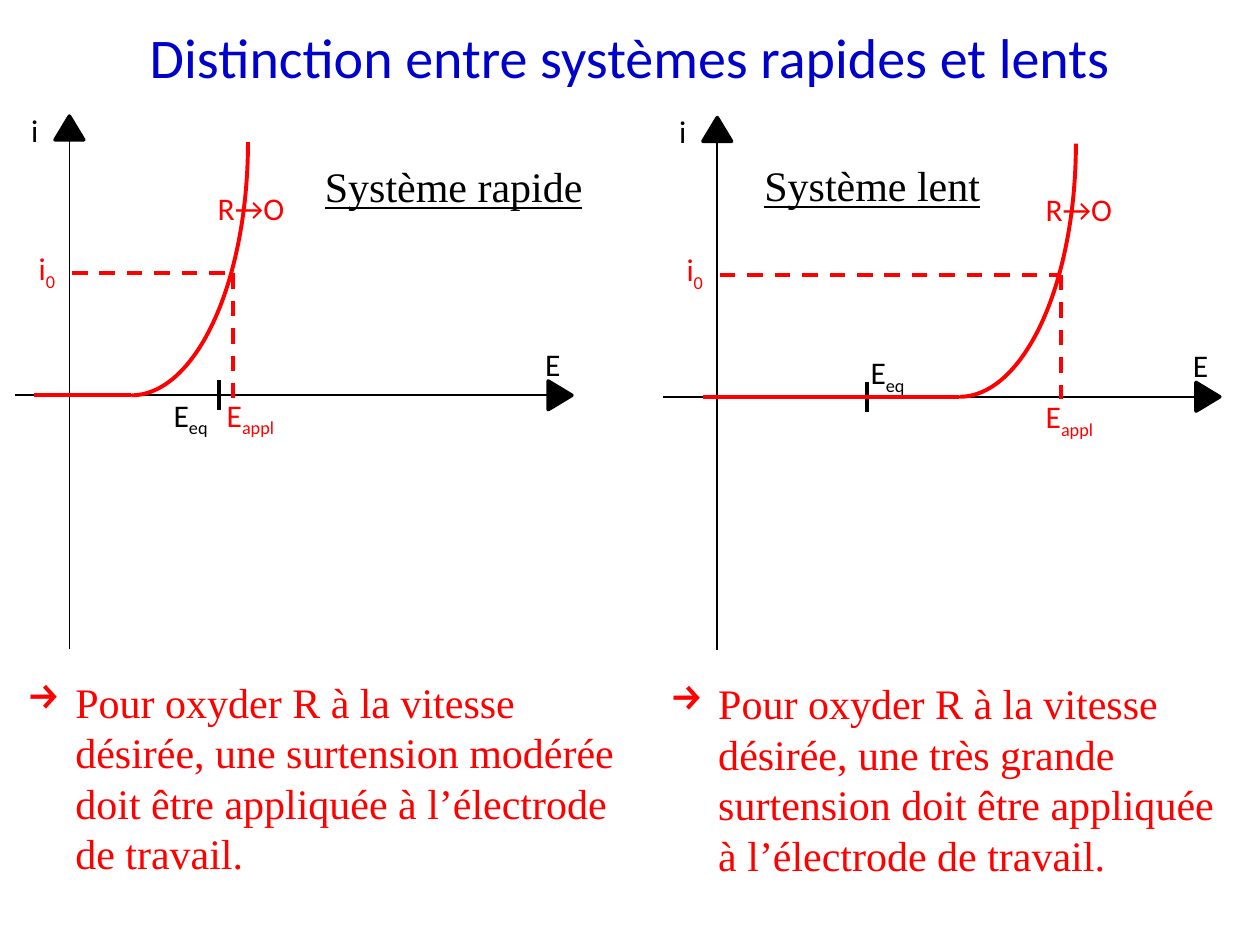
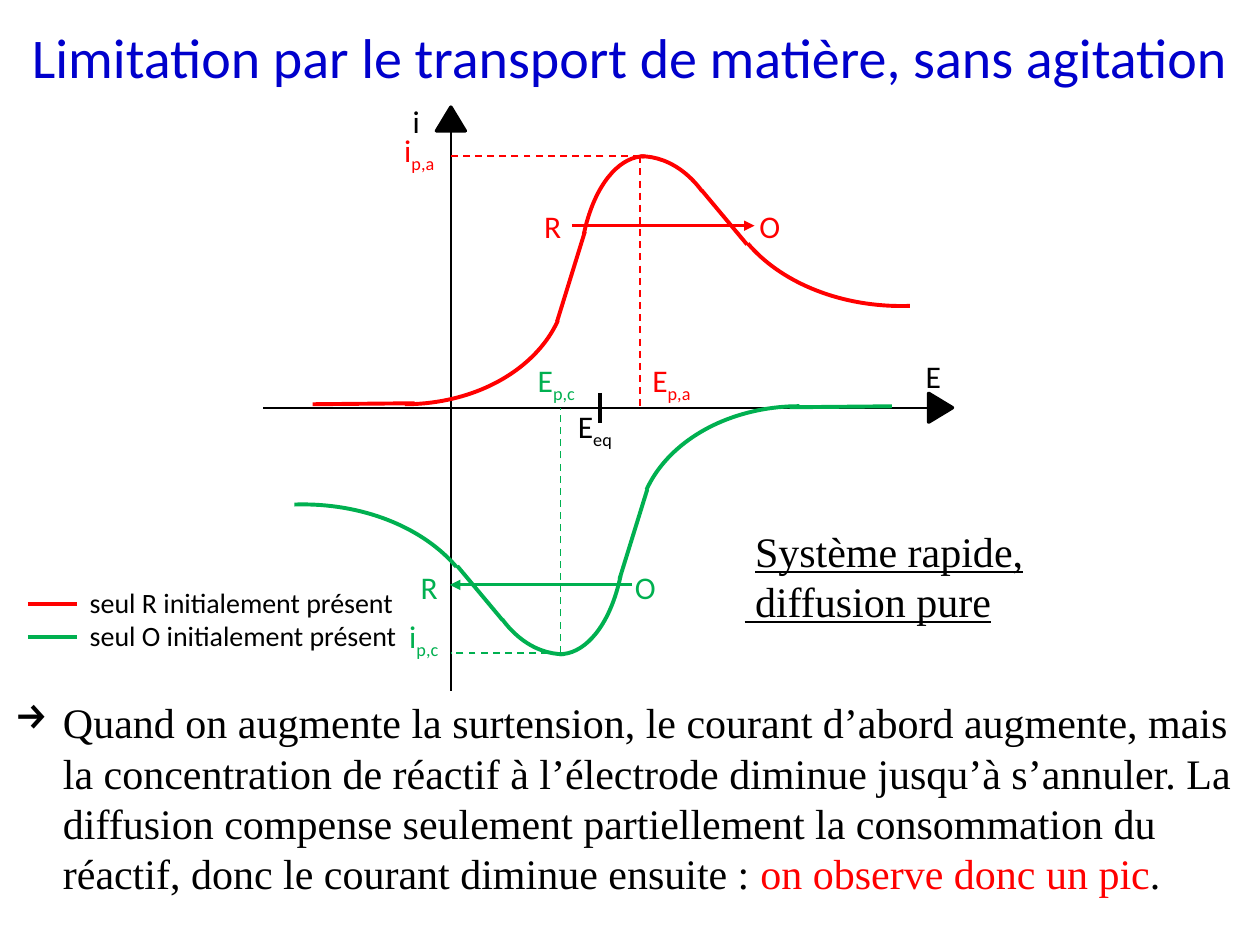
from lxml import etree
from pptx import Presentation
from pptx.dml.color import RGBColor
from pptx.enum import dml, shapes, text
from pptx.oxml import ns
from pptx.util import Cm, Pt

BLACK, RED, GREEN, BLUE = "000000", "FF0000", "00B050", "0000CC"
SANS, SERIF = "Calibri", "Times New Roman"
CURVE_PT = 2.25
INDENT = 0.97


def color(hex_code):
    return RGBColor.from_string(hex_code)


def sub(parent, tag, **attrs):
    return etree.SubElement(parent, ns.qn(tag), **attrs)


def add_run(p, words, size, hue, font, underline=False, subscript=False):
    r = p.add_run()
    r.text = words
    r.font.size, r.font.name = Pt(size), font
    r.font.color.rgb = color(hue)
    if underline:
        r.font.underline = True
    if subscript:
        r.font._element.set("baseline", "-25000")


def add_box(s, x, y, w, h):
    tf = s.shapes.add_textbox(Cm(x), Cm(y), Cm(w), Cm(h)).text_frame
    tf.word_wrap = True
    return tf


def label(s, x, y, words, hue=BLACK, index="", w=2.3, size=18):
    p = add_box(s, x, y, w, 1.02).paragraphs[0]
    add_run(p, words, size, hue, SANS)
    if index:
        add_run(p, index, size, hue, SANS, subscript=True)


def line(s, x1, y1, x2, y2, hue=BLACK, pt=1, dash=False, arrow=False):
    c = s.shapes.add_connector(shapes.MSO_CONNECTOR.STRAIGHT, Cm(x1), Cm(y1), Cm(x2), Cm(y2))
    c.line.color.rgb = color(hue)
    c.line.width = Pt(pt)
    if dash:
        c.line.dash_style = dml.MSO_LINE.DASH
    if arrow:
        sub(c.line._get_or_add_ln(), "a:tailEnd", type="triangle")
    sub(c._element.spPr, "a:effectLst")


def arc(s, x, y, w, h, start, end, hue):
    """Clockwise arc of an ellipse, in degrees from three o'clock."""
    sp = s.shapes.add_shape(shapes.MSO_SHAPE.ARC, Cm(x), Cm(y), Cm(w), Cm(h))
    for i, angle in enumerate((start, end)):
        sp.adjustments[i] = angle % 360 * 0.6
    sp.shadow.inherit = False
    sp.fill.background()
    sp.line.color.rgb = color(hue)
    sp.line.width = Pt(CURVE_PT)


def arrowhead(s, x, y, rotation=0):
    sp = s.shapes.add_shape(shapes.MSO_SHAPE.ISOSCELES_TRIANGLE, Cm(x), Cm(y), Cm(0.58), Cm(0.48))
    sp.rotation = rotation
    sp.fill.solid()
    sp.fill.fore_color.rgb = color(BLACK)
    sp.line.color.rgb = color(BLACK)
    sp.line.width = Pt(2)
    sub(sp.line._get_or_add_ln(), "a:round")
    sp.shadow.inherit = False


def title(s, words):
    p = add_box(s, 0, 0.33, 25.4, 1.63).paragraphs[0]
    p.alignment = text.PP_ALIGN.CENTER
    add_run(p, words, 32, BLUE, SANS)


def note(s, x, y, w, *parts):
    """Paragraph with an arrow bullet; parts are (words, colour)."""
    p = add_box(s, x, y, w, 4.37).paragraphs[0]
    pPr = p._p.get_or_add_pPr()
    pPr.set("marL", str(Cm(INDENT)))
    pPr.set("indent", str(-Cm(INDENT)))
    sub(pPr, "a:buChar", char="→")
    for words, hue in parts:
        add_run(p, words, 24, hue, SERIF)


def axes(s, x, y, w, h, x0, y0, tick, eq_at):
    """Current-potential axes crossing at (x0, y0) within the box."""
    x0, y0, right = x + x0, y + y0, x + w
    line(s, x, y0, right, y0)
    line(s, x0, y, x0, y + h)
    arrowhead(s, x0 - 0.29, y - 0.43)
    arrowhead(s, right - 0.1, y0 - 0.24, 90)
    line(s, x + tick, y0 - 0.3, x + tick, y0 + 0.3, pt=2)
    label(s, x + eq_at[0], y + eq_at[1], "E", index="eq", w=2)
    label(s, right - 0.36, y0 - 1.14, "E", w=1.5)
    label(s, x0 - 1.02, y - 0.66, "i", w=1)


def oxidation_plot(s, x, y, name, name_at, eq_at, shift, foot, appl):
    """Axes with an oxidation branch moved right by shift."""
    x0, y0, level = 1.1, 5.2, 2.74
    axes(s, x, y, 10.8, 10.31, x0, y0, 4.12, eq_at)
    # Current curve
    left = x + shift
    arc(s, left, y - 5.01, 4.7, 10.21, 0, 90, RED)
    line(s, left + 2.35, y + y0, x + foot, y + y0, RED, CURVE_PT)
    label(s, left + 3.84, y + 0.91, "R→O", RED, w=3)
    # Applied potential and its current
    line(s, left + 4.4, y + level, left + 4.4, y + y0 + 0.05, RED, CURVE_PT, dash=True)
    label(s, x + appl, y + 5.08, "E", RED, "appl")
    line(s, x + x0 + 0.05, y + level, left + 4.4, y + level, RED, CURVE_PT, dash=True)
    label(s, x + 0.23, y + 2.12, "i", RED, "0", w=1)
    # Name of the system
    p = add_box(s, x + name_at[0], y + name_at[1], 5.87, 1.27).paragraphs[0]
    add_run(p, name, 24, BLACK, SERIF, underline=True)


# Oxidation wave, relative to its axes: x, y, w, h, start, end
WAVE_ARCS = [
    (-0.41, 0.53, 6.53, 5.03, 15.08, 90),
    (6.37, 0.56, 2.64, 4.95, 216.13, 270),
    (5.82, 0.56, 3.56, 4.95, 270, 305.07),
    (9.22, -1.75, 7.29, 5.33, 86.35, 155.6),
]
WAVE_LINES = [
    (0.99, 5.56, 3.05, 5.54),
    (5.92, 3.89, 6.48, 2.08),
    (8.84, 1.25, 9.75, 2.34),
]
REACTION = (6.22, 1.96, 9.9, 1.96)
TURN_X, TURN_Y = 13.66, 11.16


def wave(s, x, y, hue, turned=False):
    """Peaked wave; the reduction wave is the same one turned by 180°."""
    def place(px, py, w=0, h=0):
        if turned:
            px, py = TURN_X - px - w, TURN_Y - py - h
        return x + px, y + py

    for ax, ay, w, h, start, end in WAVE_ARCS:
        turn = 180 if turned else 0
        arc(s, *place(ax, ay, w, h), w, h, start + turn, end + turn, hue)
    for x1, y1, x2, y2 in WAVE_LINES:
        line(s, *place(x1, y1), *place(x2, y2), hue, CURVE_PT)
    line(s, *place(*REACTION[:2]), *place(*REACTION[2:]), hue, 1.75, arrow=True)


def peak_marks(s, x, y, x0, y0, peak, hue, index, e_at, i_at, r_at, o_at):
    px, py = x + peak[0], y + peak[1]
    line(s, px, py, x + x0, py, hue, dash=True)
    line(s, px, py, px, y + y0, hue, dash=True)
    for words, sub_text, (lx, ly) in (("E", index, e_at), ("i", index, i_at),
                                      ("R", "", r_at), ("O", "", o_at)):
        label(s, x + lx, y + ly, words, hue, sub_text)


def peak_plot(s, x, y):
    x0, y0 = 3.78, 5.63
    axes(s, x, y, 13.46, 11.33, x0, y0, 6.78, (6.09, 5.49))
    wave(s, x, y, RED)
    peak_marks(s, x, y, x0, y0, (7.59, 0.56), RED, "p,a",
               (7.59, 4.57), (2.59, -0.08), (5.41, 1.45), (9.75, 1.45))
    wave(s, x, y, GREEN, turned=True)
    peak_marks(s, x, y, x0, y0, (5.99, 10.57), GREEN, "p,c",
               (5.28, 4.57), (2.69, 9.73), (2.92, 8.74), (7.24, 8.74))


def legend(s, x, y):
    entries = [("seul R initialement présent", RED), ("seul O initialement présent", GREEN)]
    for i, (words, hue) in enumerate(entries):
        row = y + i * 0.68
        line(s, x, row, x + 1, row, hue, CURVE_PT)
        label(s, x + 1, row - 0.5, words, w=7.2, size=16)


def speed_slide(prs):
    s = prs.slides.add_slide(prs.slide_layouts[6])
    title(s, "Distinction entre systèmes rapides et lents")
    oxidation_plot(s, 0.3, 2.77, "Système rapide", (6, 0.35), (2.95, 5.08), 0, 0.39, 4.02)
    oxidation_plot(s, 13.36, 2.8, "Système lent", (1.8, 0.3), (3.94, 4.19), 3.63, 0.81, 7.47)
    note(s, 0.3, 13.51, 12.4, ("Pour oxyder R à la vitesse désirée, une surtension modérée "
                               "doit être appliquée à l’électrode de travail.", RED))
    note(s, 13.26, 13.54, 12.04, ("Pour oxyder R à la vitesse désirée, une très grande surtension "
                                  "doit être appliquée à l’électrode de travail.", RED))


def transport_slide(prs):
    s = prs.slides.add_slide(prs.slide_layouts[6])
    title(s, "Limitation par le transport de matière, sans agitation")
    peak_plot(s, 5.31, 2.59)
    # Name of the system
    tf = add_box(s, 14.76, 10.46, 7.24, 2.31)
    add_run(tf.paragraphs[0], " ", 24, BLACK, SERIF)
    add_run(tf.paragraphs[0], "Système rapide,", 24, BLACK, SERIF, underline=True)
    add_run(tf.add_paragraph(), " diffusion pure", 24, BLACK, SERIF, underline=True)
    note(s, 0.05, 13.92, 25.4,
         ("Quand on augmente la surtension, le courant d’abord augmente, mais la concentration "
          "de réactif à l’électrode diminue jusqu’à s’annuler. La diffusion compense seulement "
          "partiellement la consommation du réactif, donc le courant diminue ensuite : ", BLACK),
         ("on observe donc un pic", RED), (".", BLACK))
    legend(s, 0.56, 12.17)


def main():
    prs = Presentation()
    prs.slide_width, prs.slide_height = Cm(25.4), Cm(19.05)
    speed_slide(prs)
    transport_slide(prs)
    prs.save("out.pptx")


if __name__ == "__main__":
    main()
